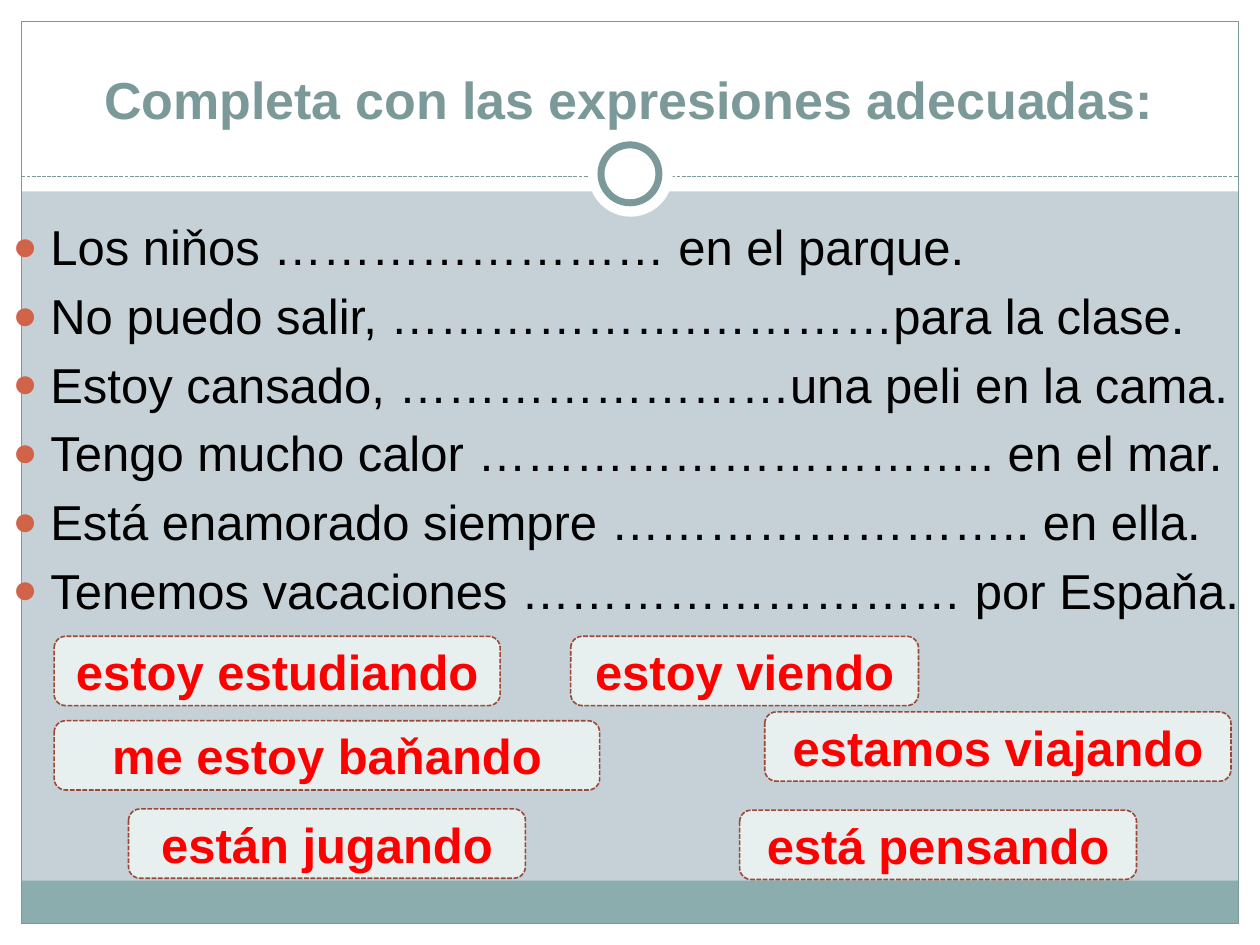
from lxml import etree
from pptx import Presentation
from pptx.dml.color import RGBColor
from pptx.enum.dml import MSO_LINE
from pptx.enum.shapes import MSO_CONNECTOR, MSO_SHAPE
from pptx.enum.text import MSO_ANCHOR, MSO_AUTO_SIZE, PP_ALIGN
from pptx.oxml.ns import qn
from pptx.util import Pt

PX = 9144
RECT, ROUND, OVAL = MSO_SHAPE.RECTANGLE, MSO_SHAPE.ROUNDED_RECTANGLE, MSO_SHAPE.OVAL
STRAIGHT, DASH = MSO_CONNECTOR.STRAIGHT, MSO_LINE.SQUARE_DOT
MIDDLE, BOTTOM, TOP = MSO_ANCHOR.MIDDLE, MSO_ANCHOR.BOTTOM, MSO_ANCHOR.TOP
CENTER, LEFT = PP_ALIGN.CENTER, PP_ALIGN.LEFT
NO_FIT = MSO_AUTO_SIZE.NONE

WHITE, SLATE, TEAL, SKY = "FFFFFF", "7C999A", "8CADAE", "C5D1D7"
RUST, BRICK, MIST, RED, BLACK = "D16349", "9B4936", "E8EFEF", "FF0000", "000000"

TITLE = "Completa con las expresiones adecuadas:"
LINES = [
    "Los niňos …………………… en el parque.",
    "No puedo salir, ……………….…………para la clase.",
    "Estoy cansado, ……………………una peli en la cama.",
    "Tengo mucho calor ………………………….. en el mar.",
    "Está enamorado siempre …………………….. en ella.",
    "Tenemos vacaciones ……………………… por Espaňa.",
]
CARDS = [
    ("están jugando", 102, 137, 315),
    ("estoy estudiando", 43, 0, 354),
    ("estamos viajando", 607, 60, 370),
    ("estoy viendo", 453, 0, 276),
    ("me estoy baňando", 43, 67, 433),
    ("está pensando", 587, 138, 315),
]


def rgb(code):
    """Turn a hex string into a colour."""
    return RGBColor.from_string(code)


def emu(*box):
    """Turn px lengths into EMU."""
    return [n * PX for n in box]


def stroke(line, color, width, dash=None):
    """Style a line or an outline."""
    line.color.rgb = rgb(color)
    line.width = Pt(width)
    if dash:
        line.dash_style = dash


def form(slide, kind, box, fill=None, line=None):
    """Add a flat shape with an optional fill and outline."""
    shape = slide.shapes.add_shape(kind, *emu(*box))
    shape.shadow.inherit = False
    if fill:
        shape.fill.solid()
        shape.fill.fore_color.rgb = rgb(fill)
    else:
        shape.fill.background()
    if line:
        stroke(shape.line, *line)
    else:
        shape.line.fill.background()
    return shape


def style(para, size, color, bold, align):
    """Set the font and alignment of a paragraph."""
    para.alignment = align
    font = para.font
    font.name, font.size, font.bold = "Arial", Pt(size), bold
    font.color.rgb = rgb(color)


def bullet(para, indent):
    """Give a paragraph a round rust bullet with a hanging indent."""
    props = para._p.get_or_add_pPr()
    props.set("marL", str(indent * PX))
    props.set("indent", str(-indent * PX))
    tint = etree.SubElement(props, qn("a:buClr"))
    etree.SubElement(tint, qn("a:srgbClr"), val=RUST)
    etree.SubElement(props, qn("a:buSzPct"), val="85000")
    etree.SubElement(props, qn("a:buFont"), typeface="Arial")
    etree.SubElement(props, qn("a:buChar"), char="●")


def place(holder, box, anchor):
    """Move a placeholder to its box, in front of what is there."""
    holder.left, holder.top, holder.width, holder.height = emu(*box)
    frame = holder.text_frame
    frame.auto_size, frame.vertical_anchor = NO_FIT, anchor
    tree = holder._element.getparent()
    tree.append(holder._element)
    return frame


def border(slide, wide, high):
    """Draw the white margins, the footer band and the outline."""
    edge = 17
    inner = wide - 2 * edge
    for box in [
        (0, high - edge, wide, edge),
        (0, 0, wide, 152),
        (0, 0, edge, high),
        (wide - edge, 0, edge, high),
    ]:
        form(slide, RECT, box, WHITE)
    form(slide, RECT, (edge, high - edge - 34, inner, 34), TEAL)
    form(slide, RECT, (edge, edge, inner, high - 2 * edge), line=(SLATE, 0.75))


def rule(slide, left, top, wide):
    """Draw the dashed rule with the ring at its middle."""
    line = slide.shapes.add_connector(STRAIGHT, *emu(left, top, left + wide, top))
    stroke(line.line, SLATE, 0.75, DASH)
    etree.SubElement(line._element.spPr, qn("a:effectLst"))
    mid = left + wide // 2
    for size, edge in [(67, None), (46, (SLATE, 4))]:
        box = (mid - size // 2, top - 2 - size // 2, size, size)
        form(slide, OVAL, box, WHITE, edge)


def head(slide, box):
    """Fill the title."""
    frame = place(slide.shapes.title, box, BOTTOM)
    frame.text = TITLE
    style(frame.paragraphs[0], 29.7, SLATE, True, CENTER)


def body(slide, box):
    """Fill the bulleted sentences."""
    frame = place(slide.placeholders[1], box, TOP)
    frame.text = "\n".join(LINES)
    for para in frame.paragraphs:
        bullet(para, 30)
        style(para, 28, BLACK, False, LEFT)


def cards(slide, top):
    """Scatter the answer cards below a given height."""
    for text, left, drop, wide in CARDS:
        box = (left, top + drop, wide, 55)
        card = form(slide, ROUND, box, MIST, (BRICK, 0.9, DASH))
        frame = card.text_frame
        frame.text = text
        frame.vertical_anchor = MIDDLE
        style(frame.paragraphs[0], 28, RED, True, CENTER)


def main():
    """Build and save the slide."""
    deck = Presentation()
    deck.slide_width, deck.slide_height = emu(1000, 750)
    slide = deck.slides.add_slide(deck.slide_layouts[1])
    back = slide.background.fill
    back.solid()
    back.fore_color.rgb = rgb(SKY)
    border(slide, 1000, 750)
    rule(slide, 17, 140, 966)
    head(slide, (33, 25, 933, 83))
    body(slide, (0, 167, 1000, 531))
    cards(slide, 505)
    deck.save("out.pptx")


if __name__ == "__main__":
    main()
